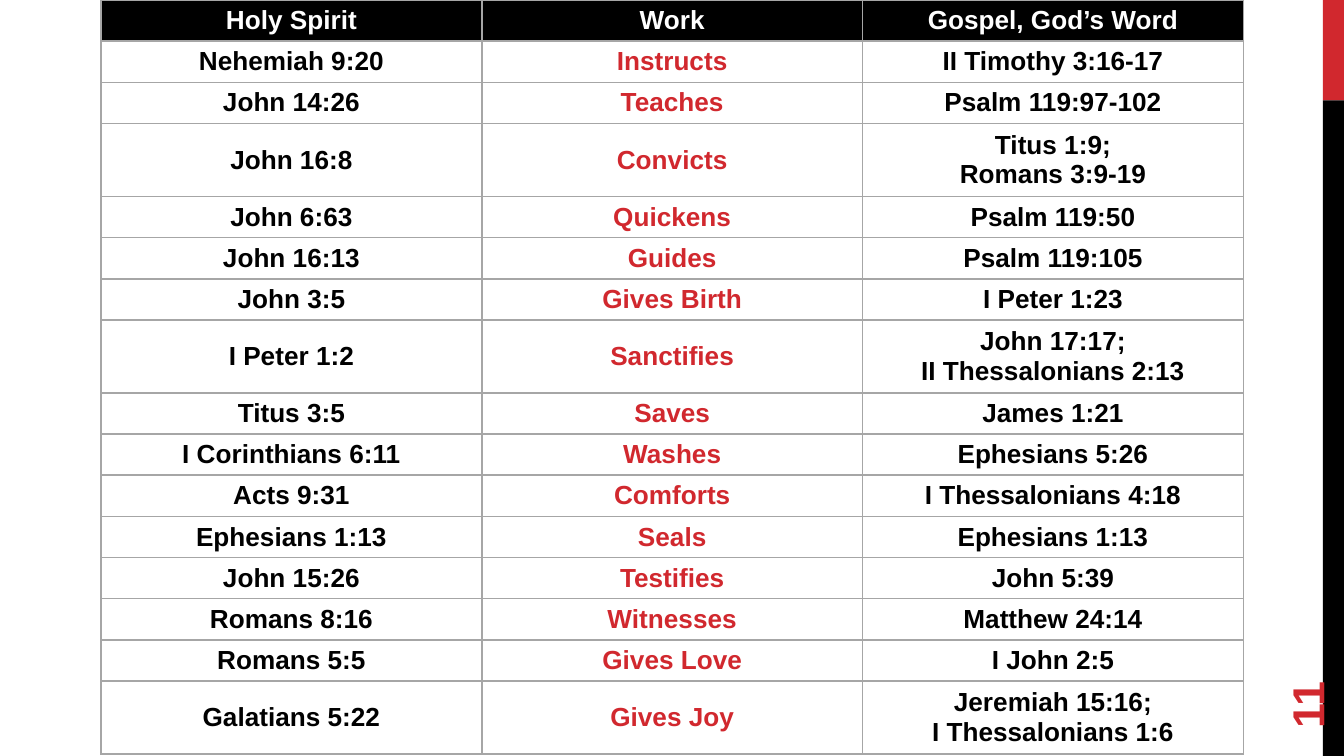
from copy import deepcopy

from lxml import etree
from pptx import Presentation
from pptx.dml.color import RGBColor
from pptx.enum.shapes import MSO_SHAPE
from pptx.enum.text import MSO_ANCHOR, PP_ALIGN
from pptx.oxml.ns import qn
from pptx.util import Cm, Pt

RECTANGLE = MSO_SHAPE.RECTANGLE
MIDDLE = MSO_ANCHOR.MIDDLE
CENTER = PP_ALIGN.CENTER
LEFT = PP_ALIGN.LEFT

FONT = "Arial"
COLORS = {"red": "D1282E", "black": "000000", "white": "FFFFFF", "border": "A6A6A6"}
SLIDE_WIDTH = 25.4
SLIDE_HEIGHT = 14.29
TABLE_HEIGHT = 14.26
TALL_ROW = 1.38

HEADER = ("Holy Spirit", "Work", "Gospel, God’s Word")
COLUMN_COLORS = ("black", "red", "black")
WORKS = [
    ("Nehemiah 9:20", "Instructs", "II Timothy 3:16-17"),
    ("John 14:26", "Teaches", "Psalm 119:97-102"),
    ("John 16:8", "Convicts", "Titus 1:9;\vRomans 3:9-19"),
    ("John 6:63", "Quickens", "Psalm 119:50"),
    ("John 16:13", "Guides", "Psalm 119:105"),
    ("John 3:5", "Gives Birth", "I Peter 1:23"),
    ("I Peter 1:2", "Sanctifies", "John 17:17;\vII Thessalonians 2:13"),
    ("Titus 3:5", "Saves", "James 1:21"),
    ("I Corinthians 6:11", "Washes", "Ephesians 5:26"),
    ("Acts 9:31", "Comforts", "I Thessalonians 4:18"),
    ("Ephesians 1:13", "Seals", "Ephesians 1:13"),
    ("John 15:26", "Testifies", "John 5:39"),
    ("Romans 8:16", "Witnesses", "Matthew 24:14"),
    ("Romans 5:5", "Gives Love", "I John 2:5"),
    ("Galatians 5:22", "Gives Joy", "Jeremiah 15:16;\vI Thessalonians 1:6"),
]


def rgb(name):
    return RGBColor.from_string(COLORS[name])


def write_text(text_frame, text, size, color, alignment):
    text_frame.text = text
    paragraph = text_frame.paragraphs[0]
    paragraph.alignment = alignment
    for run in paragraph.runs:
        run.font.name = FONT
        run.font.size = Pt(size)
        run.font.bold = True
        run.font.color.rgb = rgb(color)
    for line_break in paragraph._p.findall(qn("a:br")):
        line_break.append(deepcopy(paragraph.runs[0]._r.rPr))


def add_bar(slide, top, height, color):
    left = 25
    bar = slide.shapes.add_shape(
        RECTANGLE, Cm(left), Cm(top), Cm(SLIDE_WIDTH - left), Cm(height))
    bar.shadow.inherit = False
    bar.fill.solid()
    bar.fill.fore_color.rgb = rgb(color)
    bar.line.fill.background()


def set_borders(cell):
    properties = cell._tc.get_or_add_tcPr()
    for index, side in enumerate(("lnL", "lnR", "lnT", "lnB")):
        line = etree.Element(qn(f"a:{side}"), w=str(Pt(1)))
        fill = etree.SubElement(line, qn("a:solidFill"))
        etree.SubElement(fill, qn("a:srgbClr"), val=COLORS["border"])
        properties.insert(index, line)


def format_cell(cell, text, color, fill):
    cell.margin_left = cell.margin_right = Cm(0.15)
    cell.margin_top = cell.margin_bottom = Cm(0.08)
    cell.vertical_anchor = MIDDLE
    write_text(cell.text_frame, text, 14, color, CENTER)
    if fill:
        cell.fill.solid()
        cell.fill.fore_color.rgb = rgb(fill)
    else:
        cell.fill.background()
    set_borders(cell)


def add_works_table(slide):
    rows = [HEADER] + WORKS
    is_tall = ["\v" in row[-1] for row in rows]
    short_row = (TABLE_HEIGHT - TALL_ROW * sum(is_tall)) / is_tall.count(False)
    table = slide.shapes.add_table(
        len(rows), len(HEADER), Cm(1.91), Cm(0), Cm(21.59), Cm(TABLE_HEIGHT)).table
    table.horz_banding = False
    for row_index, texts in enumerate(rows):
        table.rows[row_index].height = Cm(TALL_ROW if is_tall[row_index] else short_row)
        for column_index, text in enumerate(texts):
            is_header = row_index == 0
            color = "white" if is_header else COLUMN_COLORS[column_index]
            fill = "black" if is_header else None
            format_cell(table.cell(row_index, column_index), text, color, fill)


def add_page_number(slide, number):
    box = slide.shapes.add_textbox(Cm(23.32), Cm(12.14), Cm(2.74), Cm(1.02))
    box.rotation = 270
    box.text_frame.word_wrap = True
    box.text_frame.vertical_anchor = MIDDLE
    write_text(box.text_frame, number, 24, "red", LEFT)


def main():
    presentation = Presentation()
    presentation.slide_width = Cm(SLIDE_WIDTH)
    presentation.slide_height = Cm(SLIDE_HEIGHT)
    slide = presentation.slides.add_slide(presentation.slide_layouts[6])
    red_height = 1.9
    add_bar(slide, 0, red_height, "red")
    add_bar(slide, red_height, SLIDE_HEIGHT - red_height, "black")
    add_works_table(slide)
    add_page_number(slide, "11")
    presentation.save("out.pptx")


if __name__ == "__main__":
    main()
